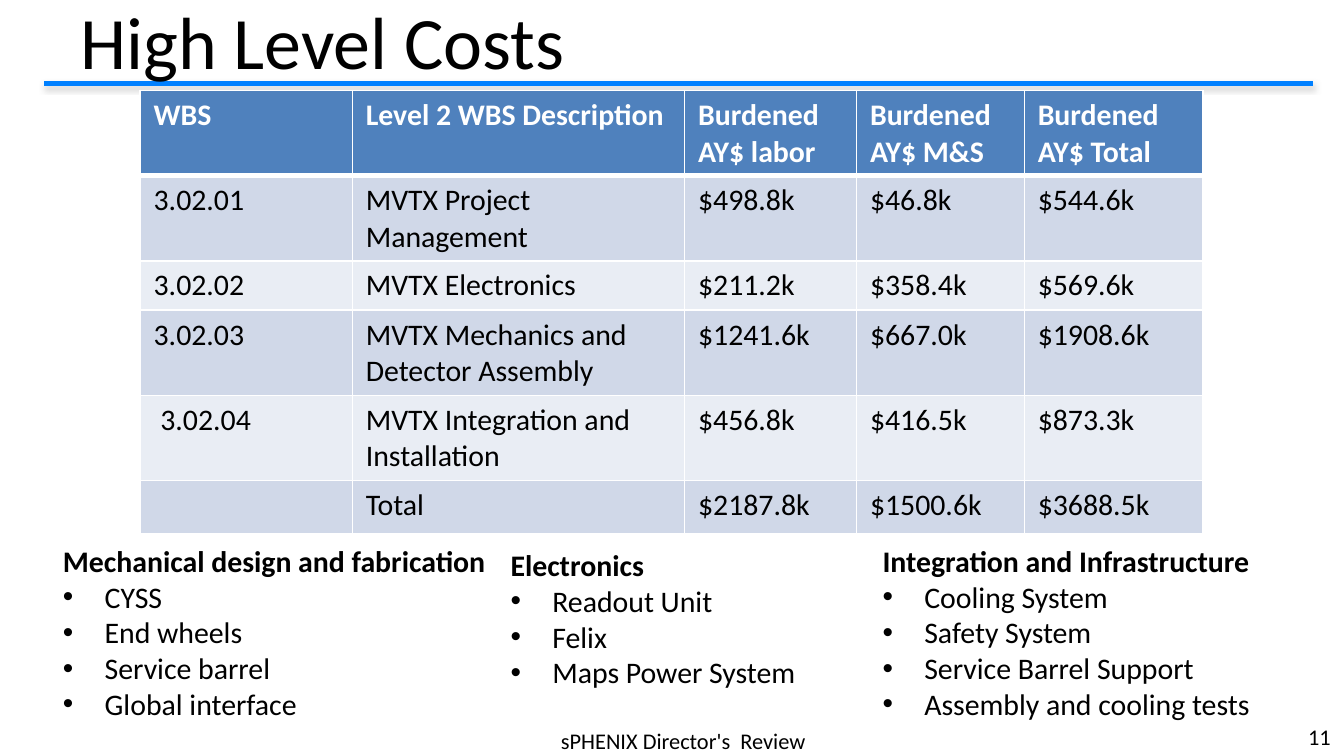
from lxml import etree
from pptx import Presentation
from pptx import util as u
from pptx.dml.color import RGBColor
from pptx.enum import shapes, text
from pptx.oxml import parse_xml
from pptx.oxml.ns import nsdecls, qn

Cm, Pt = u.Cm, u.Pt
FONT = "Calibri"
BLACK, WHITE, RULE_BLUE = "000000", "FFFFFF", "0080FF"
HEADER_FILL, BAND_FILLS = "4F81BD", ("D0D8E8", "E9EDF4")
BULLET_INDENT = Cm(0.79)

COLUMN_WIDTHS = (4.01, 6.28, 3.25, 3.17, 3.38)
ROW_HEIGHTS = (1.61, 1.61, 0.92, 1.61, 1.61, 0.92)
COSTS = (
    ("WBS", "Level 2 WBS Description", "Burdened AY$ labor",
     "Burdened AY$ M&S", "Burdened AY$ Total"),
    ("3.02.01", "MVTX Project Management", "$498.8k", "$46.8k", "$544.6k"),
    ("3.02.02", "MVTX Electronics", "$211.2k", "$358.4k", "$569.6k"),
    ("3.02.03", "MVTX Mechanics and Detector Assembly",
     "$1241.6k", "$667.0k", "$1908.6k"),
    (" 3.02.04", "MVTX Integration and Installation",
     "$456.8k", "$416.5k", "$873.3k"),
    ("", "Total", "$2187.8k", "$1500.6k", "$3688.5k"),
)

# left, top, width, height, heading, items
SCOPE_LISTS = (
    (0.94, 10.13, 8.61, 3.68, "Mechanical design and fabrication",
     ("CYSS", "End wheels", "Service barrel", "Global interface")),
    (9.4, 10.21, 6.4, 3.0, "Electronics",
     ("Readout Unit", "Felix", "Maps Power System")),
    (16.43, 10.13, 8.59, 3.68, "Integration and Infrastructure",
     ("Cooling System", "Safety System", "Service Barrel Support",
      "Assembly and cooling tests")),
)


def color(value):
    return RGBColor.from_string(value)


def write(para, words, size=16, fill=BLACK, bold=False, align=None, bullet=False):
    if bullet:
        props = para._p.get_or_add_pPr()
        props.set("marL", str(BULLET_INDENT))
        props.set("indent", str(-BULLET_INDENT))
        etree.SubElement(props, qn("a:buFont")).set("typeface", "Arial")
        etree.SubElement(props, qn("a:buChar")).set("char", "•")
    if align is not None:
        para.alignment = align
    span = para.add_run()
    span.text = words
    span.font.name, span.font.size, span.font.bold = FONT, Pt(size), bold
    span.font.color.rgb = color(fill)


def add_box(page, left, top, width, height, anchor=text.MSO_ANCHOR.TOP):
    """Add an empty wrapping text box and return its text frame."""
    box = page.shapes.add_textbox(Cm(left), Cm(top), Cm(width), Cm(height))
    frame = box.text_frame
    frame.word_wrap = True
    frame.vertical_anchor = anchor
    return frame


def add_label(page, words, *place, **style):
    frame = add_box(page, *place, anchor=text.MSO_ANCHOR.MIDDLE)
    write(frame.paragraphs[0], words, **style)


def add_scope_list(page, left, top, width, height, heading, items):
    frame = add_box(page, left, top, width, height)
    write(frame.paragraphs[0], heading, bold=True)
    for item in items:
        write(frame.add_paragraph(), item, bullet=True)


def add_title_rule(page):
    rule = page.shapes.add_connector(
        shapes.MSO_CONNECTOR.STRAIGHT, Cm(0.84), Cm(1.58), Cm(24.82), Cm(1.58))
    rule.line.color.rgb = color(RULE_BLUE)
    rule.line.width = Pt(2.25)
    rule._element.spPr.append(parse_xml(
        f'<a:effectLst {nsdecls("a")}><a:outerShdw blurRad="{Pt(3.1)}" '
        f'dist="{Pt(1.6)}" dir="5400000" rotWithShape="0">'
        '<a:srgbClr val="808080"><a:alpha val="38000"/></a:srgbClr>'
        '</a:outerShdw></a:effectLst>'))


def set_borders(cell, **widths):
    """Draw white cell borders; widths are points by side: L, R, T, B."""
    props = cell._tc.get_or_add_tcPr()
    for index, (side, width) in enumerate(widths.items()):
        props.insert(index, parse_xml(
            f'<a:ln{side} {nsdecls("a")} w="{Pt(width)}"><a:solidFill>'
            f'<a:srgbClr val="{WHITE}"/></a:solidFill></a:ln{side}>'))


def add_cost_table(page):
    table = page.shapes.add_table(
        len(COSTS), len(COLUMN_WIDTHS), Cm(2.65), Cm(1.71),
        Cm(sum(COLUMN_WIDTHS)), Cm(sum(ROW_HEIGHTS))).table
    for column, width in zip(table.columns, COLUMN_WIDTHS):
        column.width = Cm(width)
    for r, (row, height, values) in enumerate(zip(table.rows, ROW_HEIGHTS, COSTS)):
        row.height = Cm(height)
        header = r == 0
        for cell, value in zip(row.cells, values):
            cell.fill.solid()
            cell.fill.fore_color.rgb = color(
                HEADER_FILL if header else BAND_FILLS[(r - 1) % 2])
            set_borders(cell, L=1, R=1, T=3 if r == 1 else 1, B=3 if header else 1)
            write(cell.text_frame.paragraphs[0], value,
                  fill=WHITE if header else BLACK, bold=header)


def main():
    deck = Presentation()
    deck.slide_width, deck.slide_height = Cm(25.4), Cm(14.29)
    page = deck.slides.add_slide(deck.slide_layouts[6])
    add_title_rule(page)
    add_label(page, "High Level Costs", 1.27, 0.08, 22.86, 1.37, size=39.6)
    add_label(page, "sPHENIX Director's  Review", 8.89, 13.69, 8.05, 0.61,
              size=12, align=text.PP_ALIGN.CENTER)
    add_cost_table(page)
    add_label(page, "11", 23.93, 13.54, 1.47, 0.76,
              size=12, align=text.PP_ALIGN.RIGHT)
    for scope in SCOPE_LISTS:
        add_scope_list(page, *scope)
    deck.save("out.pptx")


if __name__ == "__main__":
    main()
